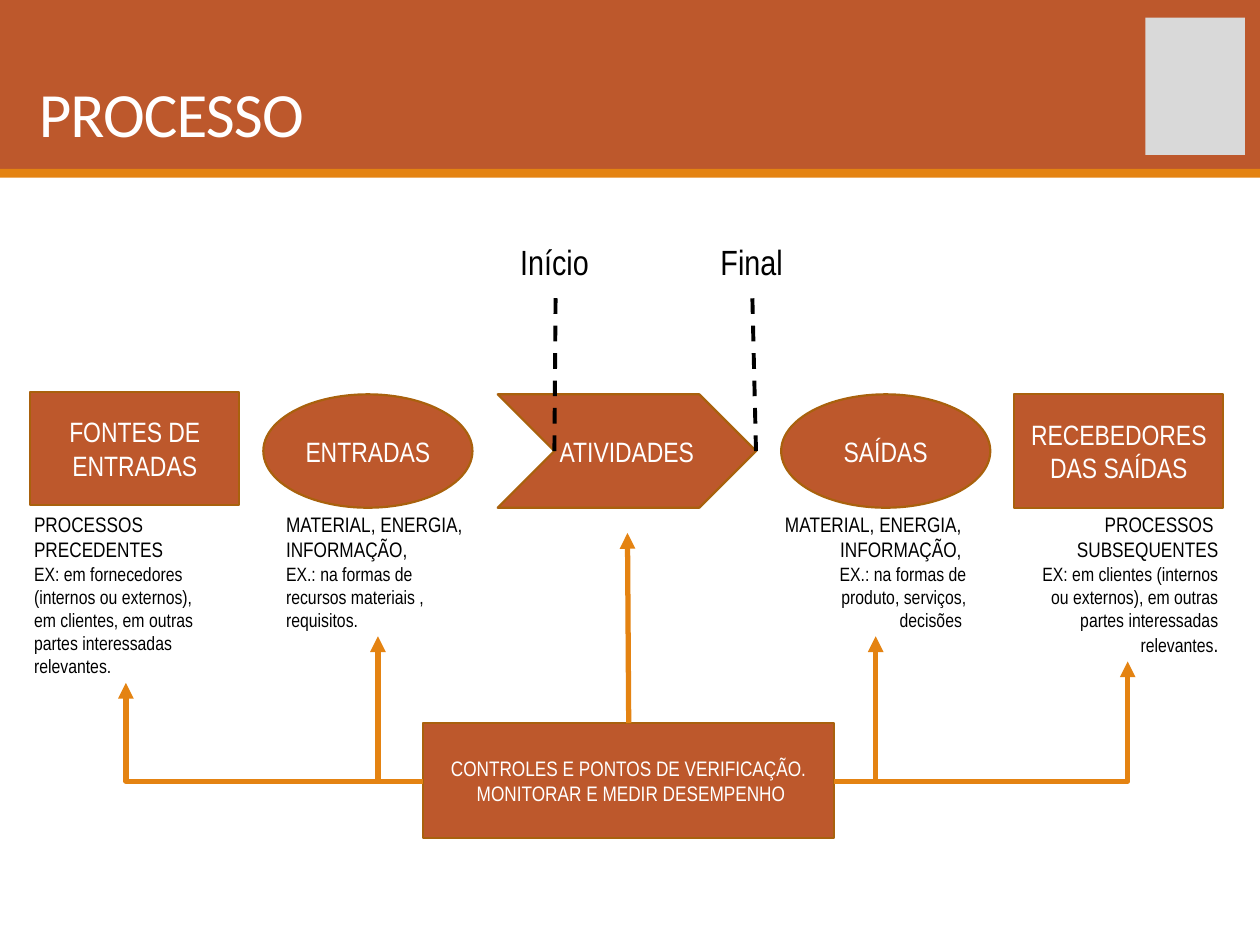
from dataclasses import dataclass

from lxml import etree
from pptx import Presentation
from pptx.dml.color import RGBColor
from pptx.enum import dml, shapes, text
from pptx.oxml import ns
from pptx.util import Inches, Pt

COLORS = {
    "rust": "BD582C",
    "orange": "E48312",
    "outline": "A9610D",
    "gray": "D9D9D9",
    "black": "000000",
    "white": "FFFFFF",
}
BODY_FONT = "Arial Narrow"
NOTE_TOP, NOTE_WIDTH = 4.03, 1.51
RECTANGLE = shapes.MSO_SHAPE.RECTANGLE
OVAL = shapes.MSO_SHAPE.OVAL
LEFT, CENTER, RIGHT = text.PP_ALIGN.LEFT, text.PP_ALIGN.CENTER, text.PP_ALIGN.RIGHT


@dataclass
class Step:
    kind: shapes.MSO_SHAPE
    left: float
    top: float
    width: float
    height: float
    lines: list[str]
    size: int = 16


@dataclass
class Note:
    left: float
    height: float
    align: text.PP_ALIGN
    headings: list[str]
    example: str


@dataclass
class Boundary:
    label: str
    left: float
    width: float
    wrap: bool
    bottom_x: float
    top_x: float


CONTROLS = Step(RECTANGLE, 3.36, 5.74, 3.26, 0.91,
                ["CONTROLES E PONTOS DE VERIFICAÇÃO.\v MONITORAR E MEDIR DESEMPENHO"], 12)
STEPS = [
    Step(shapes.MSO_SHAPE.CHEVRON, 3.95, 3.13, 2.05, 0.9, ["ATIVIDADES"]),
    Step(RECTANGLE, 0.24, 3.11, 1.66, 0.9, ["FONTES DE", "ENTRADAS"]),
    Step(OVAL, 2.09, 3.13, 1.66, 0.9, ["ENTRADAS"]),
    Step(OVAL, 6.2, 3.13, 1.66, 0.9, ["SAÍDAS"]),
    Step(RECTANGLE, 8.05, 3.13, 1.66, 0.9, ["RECEBEDORES DAS SAÍDAS"]),
]
NOTES = [
    Note(0.24, 1.39, LEFT, ["PROCESSOS", "PRECEDENTES"],
         "EX: em fornecedores (internos ou externos), em clientes, "
         "em outras partes interessadas relevantes."),
    Note(2.24, 1.02, LEFT, ["MATERIAL, ENERGIA,", "INFORMAÇÃO,"],
         "EX.: na formas de recursos materiais , requisitos."),
    Note(6.19, 1.02, RIGHT, ["MATERIAL, ENERGIA, ", "INFORMAÇÃO, "],
         "EX.: na formas de produto, serviços, decisões "),
    Note(8.19, 1.22, RIGHT, ["PROCESSOS ", "SUBSEQUENTES"],
         "EX: em clientes (internos ou externos), em outras partes interessadas relevantes"),
]
BOUNDARIES = [
    Boundary("Início", 4.03, 0.75, True, 4.4, 4.41),
    Boundary("Final", 5.62, 0.7, False, 6, 5.97),
]
# Arrow tips, reached from the nearer side of the controls box
FEEDBACK_TIPS = [(1, 5.42), (8.95, 5.25), (3, 5.05), (6.95, 5.05)]


def rgb(name: str) -> RGBColor:
    return RGBColor.from_string(COLORS[name])


def set_margins(frame, horizontal: float, vertical: float) -> None:
    frame.margin_left = frame.margin_right = Inches(horizontal)
    frame.margin_top = frame.margin_bottom = Inches(vertical)


def write_lines(frame, lines: list[tuple[str, int]], align, color: str,
                typeface: str = BODY_FONT) -> None:
    """Write one paragraph for each (wording, point size) pair."""
    for index, (wording, size) in enumerate(lines):
        paragraph = frame.add_paragraph() if index else frame.paragraphs[0]
        paragraph.text = wording
        paragraph.alignment = align
        paragraph.font.name = typeface
        paragraph.font.size = Pt(size)
        paragraph.font.color.rgb = rgb(color)


def add_block(slide, kind, left: float, top: float, width: float, height: float, fill: str):
    shape = slide.shapes.add_shape(kind, Inches(left), Inches(top), Inches(width), Inches(height))
    shape.shadow.inherit = False
    shape.fill.solid()
    shape.fill.fore_color.rgb = rgb(fill)
    shape.line.fill.background()
    return shape


def add_text_box(slide, left: float, top: float, width: float, height: float):
    box = slide.shapes.add_textbox(Inches(left), Inches(top), Inches(width), Inches(height))
    box.text_frame.word_wrap = True
    return box.text_frame


def add_step(slide, step: Step):
    shape = add_block(slide, step.kind, step.left, step.top, step.width, step.height, "rust")
    shape.line.color.rgb = rgb("outline")
    shape.line.width = Pt(1.25)
    frame = shape.text_frame
    frame.word_wrap = True
    frame.vertical_anchor = text.MSO_ANCHOR.MIDDLE
    set_margins(frame, 0.03, 0.03)
    write_lines(frame, [(line, step.size) for line in step.lines], CENTER, "white")
    return shape


def add_note(slide, note: Note):
    frame = add_text_box(slide, note.left, NOTE_TOP, NOTE_WIDTH, note.height)
    frame.auto_size = text.MSO_AUTO_SIZE.SHAPE_TO_FIT_TEXT
    set_margins(frame, 0.03, 0.03)
    lines = [(heading, 12) for heading in note.headings] + [(note.example, 11)]
    write_lines(frame, lines, note.align, "black")
    return frame


def add_line(slide, kind, start: tuple, end: tuple, color: str, width: float):
    line = slide.shapes.add_connector(kind, *map(Inches, start + end))
    line.line.color.rgb = rgb(color)
    line.line.width = Pt(width)
    etree.SubElement(line._element.spPr, ns.qn("a:effectLst"))
    return line


def add_arrow(slide, kind, start: tuple, end: tuple):
    arrow = add_line(slide, kind, start, end, "orange", 3)
    etree.SubElement(arrow.line._get_or_add_ln(), ns.qn("a:tailEnd"), type="triangle")
    return arrow


def add_feedback(slide, tip: tuple) -> None:
    """Run sideways from the controls box, then turn up once to the tip."""
    start_x = CONTROLS.left if tip[0] < CONTROLS.left else CONTROLS.left + CONTROLS.width
    arrow = add_arrow(slide, shapes.MSO_CONNECTOR.ELBOW, (start_x, 6.2), tip)
    arrow._element.spPr.find(ns.qn("a:prstGeom")).set("prst", "bentConnector2")


def add_boundary(slide, boundary: Boundary) -> None:
    frame = add_text_box(slide, boundary.left, 1.86, boundary.width, 0.44)
    frame.word_wrap = boundary.wrap
    frame.auto_size = text.MSO_AUTO_SIZE.SHAPE_TO_FIT_TEXT
    write_lines(frame, [(boundary.label, 20)], LEFT, "black")
    line = add_line(slide, shapes.MSO_CONNECTOR.STRAIGHT, (boundary.bottom_x, 3.58),
                    (boundary.top_x, 2.3), "black", 2.25)
    line.line.dash_style = dml.MSO_LINE.DASH


def add_header(slide) -> None:
    add_block(slide, RECTANGLE, 0, 0, 10, 1.34, "rust")
    add_block(slide, RECTANGLE, 0, 1.34, 10, 0.07, "orange")
    add_block(slide, RECTANGLE, 9.09, 0.14, 0.79, 1.09, "gray")
    frame = add_text_box(slide, 0.21, 0.17, 8.76, 1.02)
    frame.vertical_anchor = text.MSO_ANCHOR.BOTTOM
    set_margins(frame, 0.1, 0)
    write_lines(frame, [("PROCESSO", 36)], LEFT, "white", "Calibri")
    title = frame.paragraphs[0]
    title.line_spacing = 0.85
    title.runs[0]._r.get_or_add_rPr().set("spc", "-50")


def main() -> None:
    presentation = Presentation()
    presentation.slide_width, presentation.slide_height = Inches(10), Inches(7.5)
    slide = presentation.slides.add_slide(presentation.slide_layouts[6])
    add_header(slide)
    controls = add_step(slide, CONTROLS)
    for step in STEPS:
        add_step(slide, step)
    note_frames = [add_note(slide, note) for note in NOTES]
    full_stop = note_frames[-1].paragraphs[-1].add_run()
    full_stop.text = "."
    full_stop.font.size = Pt(12)
    for tip in FEEDBACK_TIPS:
        add_feedback(slide, tip)
    arrow = add_arrow(slide, shapes.MSO_CONNECTOR.STRAIGHT, (4.99, 5.74), (4.98, 4.23))
    arrow.begin_connect(controls, 0)
    for boundary in BOUNDARIES:
        add_boundary(slide, boundary)
    presentation.save("out.pptx")


if __name__ == "__main__":
    main()
